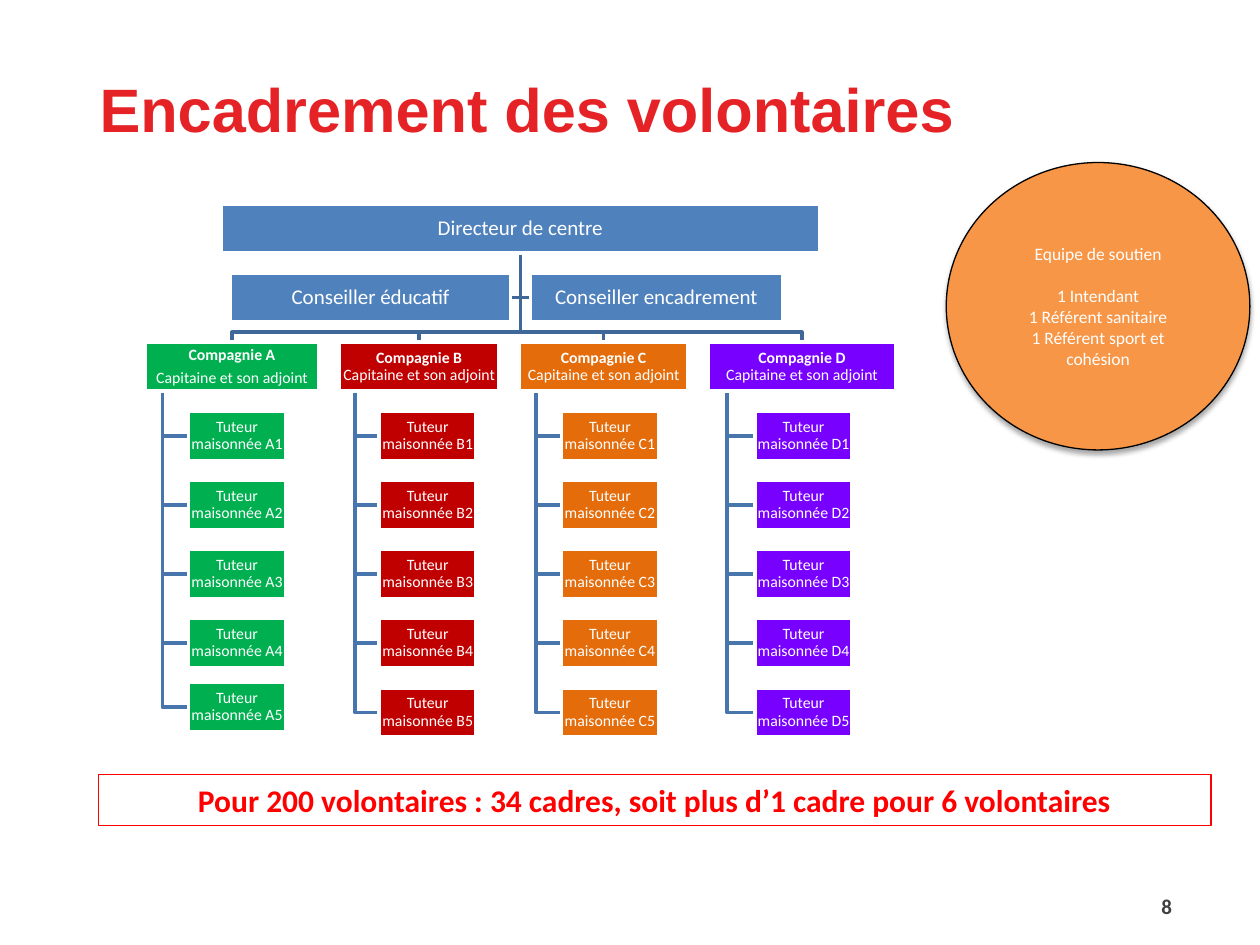
from pptx import Presentation, util as u
from pptx.dml.color import RGBColor
from pptx.enum import shapes, text
from pptx.oxml import parse_xml
from pptx.oxml.ns import nsdecls

COLORS = {
    "title": "E52326", "white": "FFFFFF", "black": "000000", "red": "FF0000",
    "number": "404040", "support": "F79646", "direction": "4F81BD",
    "trunk": "3F6797", "branch": "4875AC",
    "A": "00B050", "B": "C00000", "C": "E46C0A", "D": "7800FF",
}
COMPANY_WIDTHS = {"A": 99.5, "B": 91.4, "C": 96.4, "D": 107.3}
BOX_H, GAP = 28, 11.5
ROW = BOX_H + GAP
TUTOR_W, TUTORS = 55.5, 5
SHADOW = (
    f'<a:outerShdw {nsdecls("a")} blurRad="{u.Pt(3.1)}" dist="{u.Pt(1.8)}" '
    'dir="5400000" algn="ctr" rotWithShape="0"><a:srgbClr val="000000">'
    '<a:alpha val="35000"/></a:srgbClr></a:outerShdw>'
)


def rgb(name):
    return RGBColor.from_string(COLORS[name])


def pts(box):
    return [u.Pt(v) for v in box]


def write(tf, paragraphs, color, size, font="Calibri", **fmt):
    for i, lines in enumerate(paragraphs):
        p = tf.paragraphs[0] if i == 0 else tf.add_paragraph()
        for k, v in ({"alignment": text.PP_ALIGN.CENTER} | fmt).items():
            setattr(p, k, v)
        for j, (words, bold) in enumerate(lines):
            if j:
                p.add_line_break()
            r = p.add_run()
            r.text = words
            for k, v in {"name": font, "size": u.Pt(size), "bold": bold}.items():
                setattr(r.font, k, v)
            r.font.color.rgb = rgb(color)


def add_shape(slide, kind, box, fill, line, width):
    sp = slide.shapes.add_shape(kind, *pts(box))
    sp.shadow.inherit = False
    if fill:
        sp.fill.solid()
        sp.fill.fore_color.rgb = rgb(fill)
    else:
        sp.fill.background()
    sp.line.color.rgb = rgb(line)
    sp.line.width = u.Pt(width)
    sp.text_frame.vertical_anchor = text.MSO_ANCHOR.MIDDLE
    return sp


def add_post(slide, box, fill, paragraphs, size):
    sp = add_shape(slide, shapes.MSO_SHAPE.RECTANGLE, box, fill, "white", 2)
    tf = sp.text_frame
    for side in ("left", "top", "right", "bottom"):
        setattr(tf, f"margin_{side}", u.Pt(0.5))
    write(tf, paragraphs, "white", size, line_spacing=0.9,
          space_after=u.Pt(round(size * 0.35, 1)))


def add_link(slide, color, start, *points):
    fb = slide.shapes.build_freeform(*pts(start))
    fb.add_line_segments([pts(point) for point in points], close=False)
    sp = fb.convert_to_shape()
    sp.shadow.inherit = False
    sp.fill.background()
    sp.line.color.rgb = rgb(color)
    sp.line.width = u.Pt(2)


def add_direction(slide, box):
    x, y, w, h = box
    mid, bottom = x + w / 2, y + BOX_H
    advisers = [("Conseiller éducatif", mid - 165.5, 160, mid - 5.5),
                ("Conseiller encadrement", mid + 5.8, 144, mid + 5.8)]
    level = y + ROW + BOX_H / 2
    for _, _, _, edge in advisers:
        add_link(slide, "trunk", (mid, bottom), (mid, level), (edge, level))
    add_post(slide, (x, y, w, BOX_H), "direction", [[("Directeur de centre", False)]], 12)
    for words, left, width, _ in advisers:
        add_post(slide, (left, y + ROW, width, BOX_H), "direction", [[(words, False)]], 12)


def add_company(slide, box, letter, root):
    x, y, w, h = box
    mid, turn = x + w / 2, y - GAP / 2
    trunk, left = x + w / 10, x + w / 4
    tops = [y + ROW * n for n in range(1, TUTORS + 1)]
    if letter == "A":
        tops[-1] -= 3
    add_link(slide, "trunk", root, (root[0], turn), (mid, turn), (mid, y))
    for top in tops:
        level = top + BOX_H / 2
        add_link(slide, "branch", (trunk, y + BOX_H), (trunk, level), (left, level))
    name, staff = (f"Compagnie {letter}", True), ("Capitaine et son adjoint", False)
    heading = [[name], [staff]] if letter == "A" else [[name, staff]]
    add_post(slide, (x, y, w, BOX_H), letter, heading, 9)
    for n, top in enumerate(tops, 1):
        add_post(slide, (left, top, TUTOR_W, BOX_H), letter,
                 [[(f"Tuteur maisonnée {letter}{n}", False)]], 9)


def add_chart(slide, box):
    x, y, w, h = box
    root_x = x + w / 2
    left = x
    for letter, width in COMPANY_WIDTHS.items():
        add_company(slide, (left, y + 2 * ROW, width, h - 2 * ROW), letter,
                    (root_x, y + BOX_H))
        left += width + GAP
    add_direction(slide, (root_x - 171, y, 342, BOX_H + ROW))


def add_support(slide, box):
    sp = add_shape(slide, shapes.MSO_SHAPE.OVAL, box, "support", "black", 0.75)
    sp._element.spPr.find(".//{*}effectLst").append(parse_xml(SHADOW))
    team = ["1 Intendant", "1 Référent sanitaire", "1 Référent sport et cohésion"]
    tf = sp.text_frame
    write(tf, [[("Equipe de soutien", False)], [(t, False) for t in team]], "white", 10)
    tf.paragraphs[1].space_before = u.Pt(12)


def add_summary(slide, box):
    sp = add_shape(slide, shapes.MSO_SHAPE.RECTANGLE, box, None, "red", 0.75)
    sp.text_frame.auto_size = text.MSO_AUTO_SIZE.SHAPE_TO_FIT_TEXT
    words = "Pour 200 volontaires : 34 cadres, soit plus d’1 cadre pour 6 volontaires"
    write(sp.text_frame, [[(words, True)]], "red", 18)


def add_title(slide, box):
    sp = slide.shapes.title
    for k, v in zip(("left", "top", "width", "height"), pts(box)):
        setattr(sp, k, v)
    sp.text_frame.vertical_anchor = text.MSO_ANCHOR.MIDDLE
    write(sp.text_frame, [[("Encadrement des volontaires", True)]], "title", 35, "Arial",
          alignment=text.PP_ALIGN.LEFT, line_spacing=0.9)


def add_number(slide, box):
    tf = slide.shapes.add_textbox(*pts(box)).text_frame
    tf.word_wrap = True
    tf.vertical_anchor = text.MSO_ANCHOR.MIDDLE
    write(tf, [[("8", True)]], "number", 12, alignment=text.PP_ALIGN.RIGHT)


def main():
    prs = Presentation()
    prs.slide_width, prs.slide_height = u.Pt(720), u.Pt(540)
    slide = prs.slides.add_slide(prs.slide_layouts[5])
    add_title(slide, (49.7, 12.2, 620.6, 104.4))
    add_support(slide, (540.7, 92.9, 173.5, 164.2))
    add_number(slide, (641.5, 503.3, 35.3, 28.8))
    add_chart(slide, (82.8, 116.6, 429.1, 304.5))
    add_summary(slide, (56.2, 442.8, 635.8, 28.8))
    prs.save("out.pptx")


if __name__ == "__main__":
    main()
